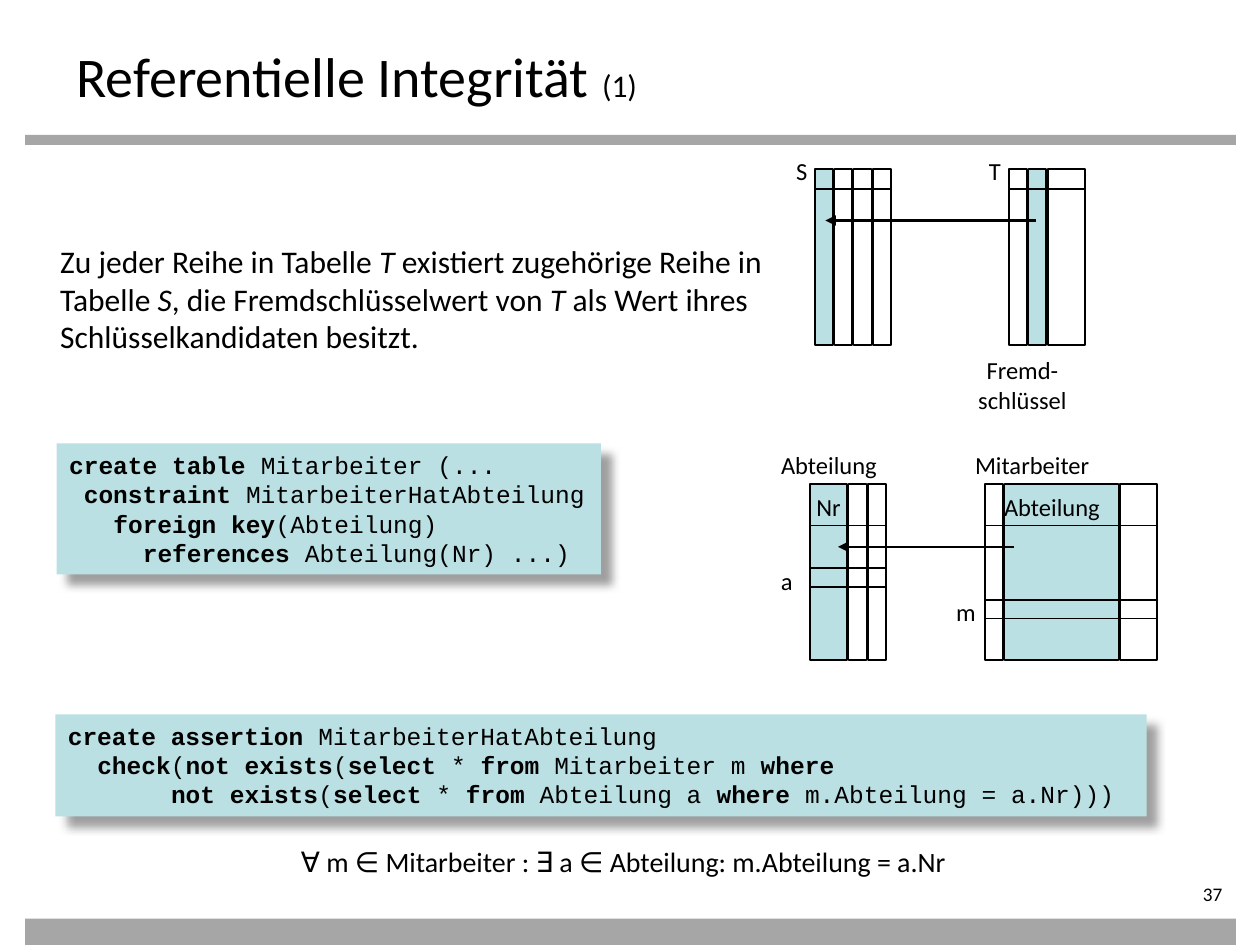
"""Build a slide on referential integrity with table sketches and SQL code."""
from dataclasses import dataclass

from lxml.etree import SubElement
from pptx import Presentation
from pptx.dml.color import RGBColor
from pptx.enum.shapes import MSO_CONNECTOR, MSO_SHAPE
from pptx.enum.text import MSO_ANCHOR, MSO_AUTO_SIZE, PP_ALIGN
from pptx.oxml.ns import qn
from pptx.util import Inches, Pt


@dataclass(frozen=True)
class Theme:
    ink: str = "000000"
    bar: str = "A6A6A6"
    tint: str = "BBE0E3"
    shadow: str = "808080"
    sans: str = "Calibri"
    mono: str = "Courier New"
    title: int = 32
    body: int = 18
    formula: int = 16
    label: int = 14
    number: int = 11


THEME = Theme()
WIDTH, HEIGHT = 10, 7.5
COLUMN_UNIT = 0.61 / 4
COLUMN_GAP = 0.01
TABLE_HEIGHT = 1.4
MARK_HEIGHT = 0.15

# Pieces between bars alternate between plain and emphasised text.
BARS = [(0.2, 1.07, 9.61, 0.08), (0.2, 7.29, 9.61, 0.21)]
TITLE = ["Referentielle Integrität |(1)"]
BODY = [
    "Zu jeder Reihe in Tabelle |T |existiert zugehörige Reihe in Tabelle |S|"
    ", die Fremdschlüsselwert von |T| als Wert ihres Schlüsselkandidaten besitzt."
]
CODE = [
    ((0.45, 3.52, 4.32, 1.04), [
        "|create table |Mitarbeiter (...",
        " |constraint |MitarbeiterHatAbteilung",
        "   |foreign key|(Abteilung)",
        "     |references| Abteilung(Nr) ...)",
    ]),
    ((0.44, 5.67, 8.66, 0.81), [
        "|create assertion |MitarbeiterHatAbteilung",
        "  |check|(|not exists|(|select| * |from| Mitarbeiter m |where",
        "       |not exists|(|select| * |from| Abteilung a |where |m.Abteilung = a.Nr)))",
    ]),
]
TABLES = [
    {"at": (6.47, 1.34), "columns": (1, 1, 1, 1), "key": 0, "header": 0.16},
    {"at": (8.01, 1.34), "columns": (1, 1, 2), "key": 1, "header": 0.16},
    {"at": (6.43, 3.84), "columns": (2, 1, 1), "key": 0, "header": 0.33, "mark": 0.67},
    {"at": (7.82, 3.84), "columns": (1, 6, 2), "key": 1, "header": 0.33, "mark": 0.92},
]
ARROWS = [(8.22, 6.55, 1.75, 2), (8.05, 6.65, 4.34, 1)]
LABELS = [
    ((6.22, 1.19, 0.3, 0.33), ["S"]),
    ((7.75, 1.19, 0.3, 0.33), ["T"]),
    ((6.38, 3.86, 0.42, 0.33), ["Nr"]),
    ((6.1, 3.52, 1.01, 0.33), ["Abteilung"]),
    ((6.1, 4.44, 0.3, 0.33), ["a"]),
    ((7.64, 3.52, 1.14, 0.33), ["Mitarbeiter"]),
    ((7.87, 3.86, 1.01, 0.33), ["Abteilung"]),
    ((7.49, 4.69, 0.36, 0.33), ["m"]),
]
FOREIGN_KEY = ["Fremd-", "schlüssel"]
FORMULA = ["∀ m ∈ Mitarbeiter : ∃ a ∈ Abteilung: m.Abteilung = a.Nr"]
NUMBER = ["37"]


def color(name):
    return RGBColor.from_string(name)


def write(box, lines, size, font=THEME.sans, emphasis=None, align=PP_ALIGN.LEFT,
          wrap=False, insets=(0.1, 0.05, 0.1, 0.05)):
    frame = box.text_frame
    frame.word_wrap = wrap
    frame.auto_size = MSO_AUTO_SIZE.NONE if wrap else MSO_AUTO_SIZE.SHAPE_TO_FIT_TEXT
    frame.vertical_anchor = MSO_ANCHOR.TOP
    (frame.margin_left, frame.margin_top,
     frame.margin_right, frame.margin_bottom) = map(Inches, insets)
    for index, line in enumerate(lines):
        para = frame.add_paragraph() if index else frame.paragraphs[0]
        para.alignment = align
        for position, piece in enumerate(line.split("|")):
            if not piece:
                continue
            span = para.add_run()
            span.text = piece
            span.font.name = font
            span.font.size = Pt(size)
            span.font.color.rgb = color(THEME.ink)
            if position % 2:
                for name, value in emphasis.items():
                    setattr(span.font, name, value)


def add_text(page, at, lines, size, **options):
    write(page.shapes.add_textbox(*map(Inches, at)), lines, size, **options)


def add_rectangle(shapes, at, fill=None, outlined=False):
    box = shapes.add_shape(MSO_SHAPE.RECTANGLE, *map(Inches, at))
    box.shadow.inherit = False
    if fill:
        box.fill.solid()
        box.fill.fore_color.rgb = color(fill)
    else:
        box.fill.background()
    if outlined:
        box.line.color.rgb = color(THEME.ink)
        box.line.width = Pt(1)
    else:
        box.line.fill.background()
    return box


def add_line(shapes, start, end, y, weight=1, arrow=False):
    line = shapes.add_connector(MSO_CONNECTOR.STRAIGHT, *map(Inches, (start, y, end, y)))
    line.line.color.rgb = color(THEME.ink)
    line.line.width = Pt(weight)
    if arrow:
        SubElement(line.line._get_or_add_ln(), qn("a:tailEnd"), type="triangle")
    SubElement(line._element.spPr, qn("a:effectLst"))


def add_shadow(box):
    effects = box._element.spPr.find(qn("a:effectLst"))
    shadow = SubElement(effects, qn("a:outerShdw"), blurRad=str(Pt(5)),
                        dist=str(Pt(8.5)), dir=str(45 * 60000), rotWithShape="0")
    tone = SubElement(shadow, qn("a:srgbClr"), val=THEME.shadow)
    SubElement(tone, qn("a:alpha"), val="75000")


def add_table_sketch(page, sketch):
    left, top = sketch["at"]
    columns = sketch["columns"]
    width = sum(columns) * COLUMN_UNIT
    shapes = page.shapes.add_group_shape().shapes
    for index, units in enumerate(columns):
        x = left + sum(columns[:index]) * COLUMN_UNIT
        fill = THEME.tint if index == sketch["key"] else None
        add_rectangle(shapes, (x, top, units * COLUMN_UNIT - COLUMN_GAP, TABLE_HEIGHT),
                      fill, outlined=True)
    add_line(shapes, left, left + width, top + sketch["header"])
    if "mark" in sketch:
        add_rectangle(shapes, (left, top + sketch["mark"], width - COLUMN_GAP, MARK_HEIGHT),
                      outlined=True)


def main():
    deck = Presentation()
    deck.slide_width, deck.slide_height = Inches(WIDTH), Inches(HEIGHT)
    page = deck.slides.add_slide(deck.slide_layouts[6])
    for at in BARS:
        add_rectangle(page.shapes, at, THEME.bar)
    add_text(page, (0.51, 0.28, 9, 0.55), TITLE, THEME.title, wrap=True,
             emphasis={"size": Pt(THEME.body)})
    add_text(page, (0.38, 1.87, 6, 5.04), BODY, THEME.body, wrap=True,
             emphasis={"italic": True})
    for at, lines in CODE:
        box = add_rectangle(page.shapes, at, THEME.tint)
        add_shadow(box)
        write(box, lines, THEME.label, font=THEME.mono, emphasis={"bold": True})
    for sketch in TABLES:
        add_table_sketch(page, sketch)
    for start, end, y, weight in ARROWS:
        add_line(page.shapes, start, end, y, weight, arrow=True)
    for at, lines in LABELS:
        add_text(page, at, lines, THEME.label)
    add_text(page, (7.65, 2.77, 0.93, 0.57), FOREIGN_KEY, THEME.label, align=PP_ALIGN.CENTER)
    add_text(page, (2.29, 6.65, 5.65, 0.37), FORMULA, THEME.formula)
    add_text(page, (8.7, 7, 1.1, 0.22), NUMBER, THEME.number, wrap=True,
             align=PP_ALIGN.RIGHT, insets=(0, 0, 0.1, 0))
    deck.save("out.pptx")


if __name__ == "__main__":
    main()
